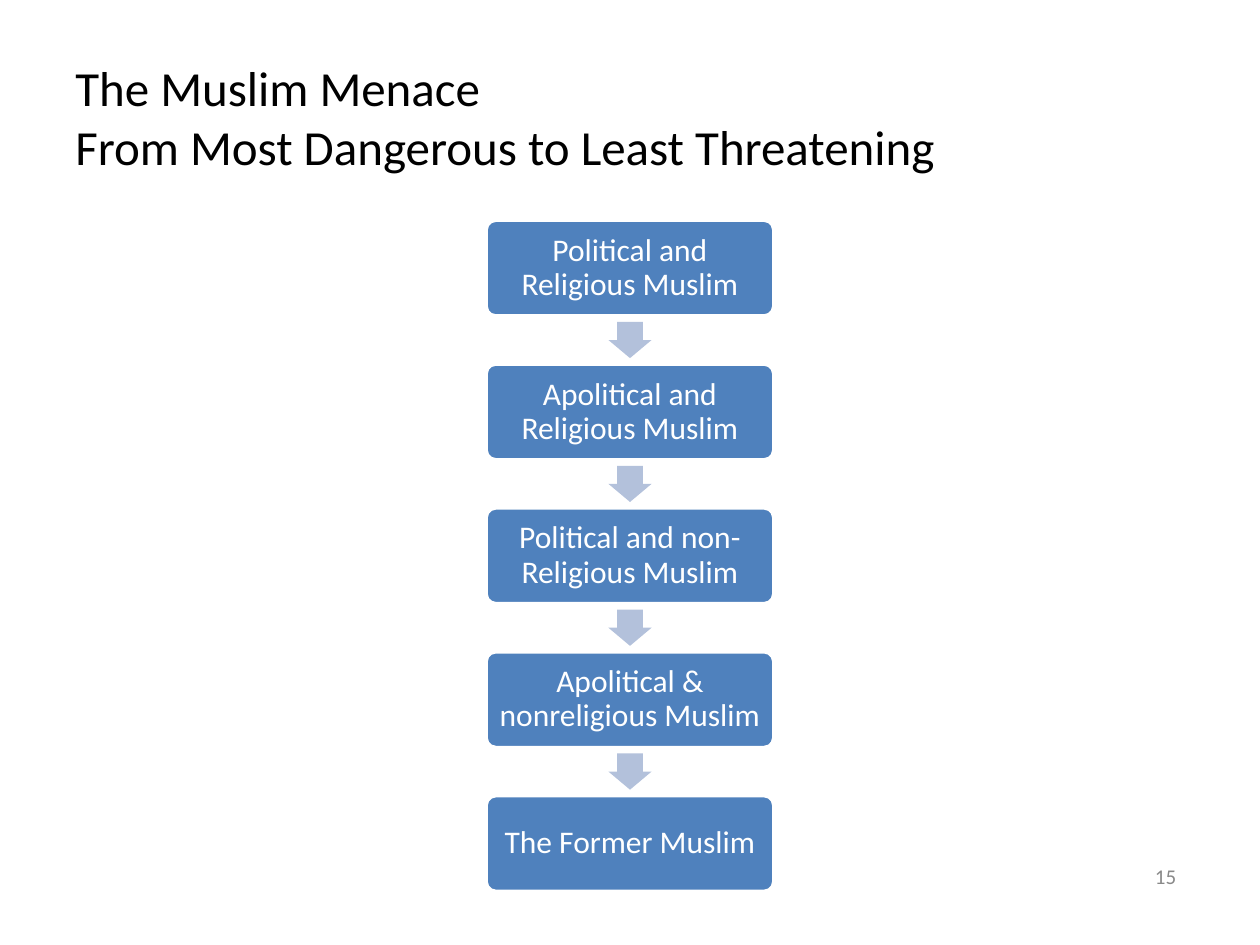
from pptx import Presentation
from pptx.dml.color import RGBColor
from pptx.enum.shapes import MSO_SHAPE
from pptx.enum.text import MSO_ANCHOR, PP_ALIGN
from pptx.util import Cm, Pt

HUES = {"text": "000000", "box": "4F81BD", "edge": "FFFFFF",
        "arrow": "B3C1DB", "page": "898989"}
STEPS = ["Political and Religious Muslim",
         "Apolitical and Religious Muslim",
         "Political and non-Religious Muslim",
         "Apolitical & nonreligious Muslim",
         "The Former Muslim"]
MID = 12.7
TOP, PITCH = 4.44, 2.9
BOX_W, BOX_H = 5.8, 1.93
ARROW_W, ARROW_H = 0.73, 0.87


def hue(name):
    return RGBColor.from_string(HUES[name])


def write(shape, text, size, color, align, inset=None):
    frame = shape.text_frame
    frame.word_wrap = True
    frame.vertical_anchor = MSO_ANCHOR.MIDDLE
    if inset is not None:
        for side in ("left", "top", "right", "bottom"):
            setattr(frame, f"margin_{side}", Cm(inset))
    frame.text = text
    para = frame.paragraphs[0]
    para.alignment = align
    for key, value in {"name": "Calibri", "size": Pt(size)}.items():
        setattr(para.font, key, value)
    para.font.color.rgb = hue(color)
    return para


def add_label(slide, place, *style):
    box = slide.shapes.add_textbox(*map(Cm, place))
    write(box, *style)


def add_solid(slide, kind, place, fill, *adjust):
    shape = slide.shapes.add_shape(kind, *map(Cm, place))
    shape.shadow.inherit = False
    shape.fill.solid()
    shape.fill.fore_color.rgb = hue(fill)
    shape.line.fill.background()
    for i, value in enumerate(adjust):
        shape.adjustments[i] = value
    return shape


def add_step(slide, top, text):
    place = (MID - BOX_W / 2, top, BOX_W, BOX_H)
    box = add_solid(slide, MSO_SHAPE.ROUNDED_RECTANGLE, place, "box", 0.1)
    box.line.color.rgb = hue("edge")
    box.line.width = Pt(2)
    para = write(box, text, 18, "edge", PP_ALIGN.CENTER, 0.18)
    para.line_spacing = 0.9


def add_arrow(slide, mid):
    """Arrow pointing down, centred at height mid."""
    place = (MID - ARROW_W / 2, mid - ARROW_H / 2, ARROW_W, ARROW_H)
    arrow = add_solid(slide, MSO_SHAPE.RIGHT_ARROW, place, "arrow", 0.6, 0.5)
    arrow.rotation = 90


def main():
    deck = Presentation()
    deck.slide_width, deck.slide_height = Cm(25.4), Cm(19.05)
    slide = deck.slides.add_slide(deck.slide_layouts[6])

    add_label(slide, (1.27, 0.76, 22.86, 3.18),
              "The Muslim Menace \vFrom Most Dangerous to Least Threatening",
              28, "text", PP_ALIGN.LEFT)
    for i, text in enumerate(STEPS):
        top = TOP + i * PITCH
        if i:
            add_arrow(slide, top - (PITCH - BOX_H) / 2)
        add_step(slide, top, text)
    add_label(slide, (18.03, 17.15, 5.93, 1.01),
              "15", 12, "page", PP_ALIGN.RIGHT)

    deck.save("out.pptx")


if __name__ == "__main__":
    main()
